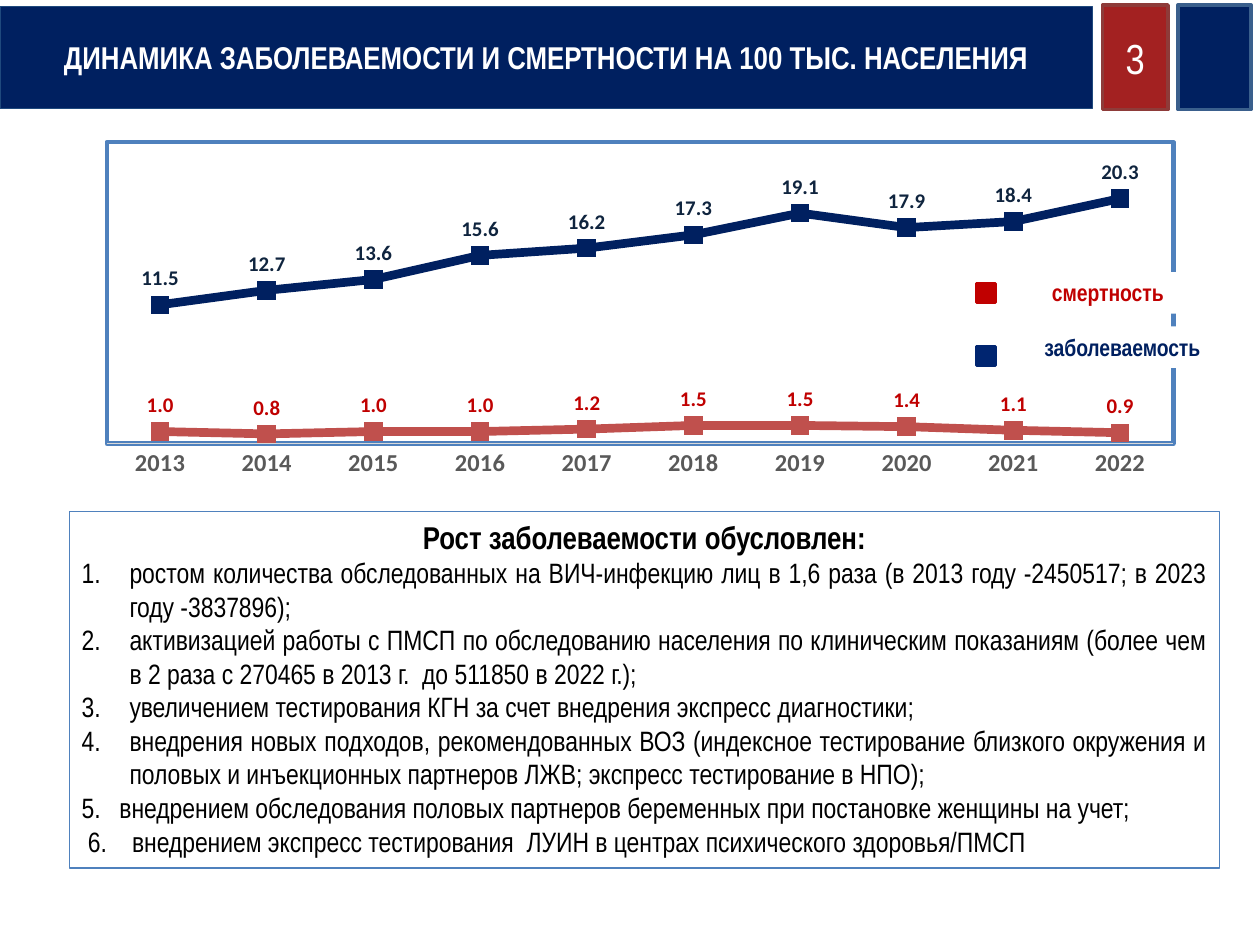
from dataclasses import dataclass

from lxml.etree import SubElement
from pptx import Presentation
from pptx.chart.data import CategoryChartData
from pptx.dml.color import RGBColor
from pptx.enum.chart import XL_CHART_TYPE, XL_LABEL_POSITION, XL_MARKER_STYLE, XL_TICK_MARK
from pptx.enum.shapes import MSO_SHAPE
from pptx.enum.text import MSO_ANCHOR, MSO_AUTO_SIZE, PP_ALIGN
from pptx.oxml import parse_xml
from pptx.oxml.ns import nsdecls, qn
from pptx.util import Inches, Pt

NAVY, MARKER_NAVY, RED, BLUE = "002060", "002570", "C00000", "4F81BD"
COLUMNS, ROWS = 100, 75


def color(hex_value):
    return RGBColor.from_string(hex_value)


@dataclass
class SlideKit:
    """Style and current slide; positions are columns and rows of the grid."""
    deck: object
    slide: object
    font: str = "Arial Narrow"
    chart_font: str = "Calibri"

    def place(self, left, top, width, height):
        column = self.deck.slide_width / COLUMNS
        row = self.deck.slide_height / ROWS
        return (round(left * column), round(top * row),
                round(width * column), round(height * row))

    def box(self, area, fill=None, line=None, weight=2):
        shape = self.slide.shapes.add_shape(MSO_SHAPE.RECTANGLE, *self.place(*area))
        shape.shadow.inherit = False
        if fill:
            shape.fill.solid()
            shape.fill.fore_color.rgb = color(fill)
        else:
            shape.fill.background()
        if line:
            shape.line.color.rgb = color(line)
            shape.line.width = Pt(weight)
        else:
            shape.line.fill.background()
        return shape

    def label(self, shape, text, size, text_color, bold=False,
              align=PP_ALIGN.CENTER, anchor=MSO_ANCHOR.MIDDLE):
        shape.text_frame.word_wrap = True
        shape.text_frame.vertical_anchor = anchor
        paragraph = shape.text_frame.paragraphs[0]
        self.style(paragraph, text, size, text_color, bold, align)

    def style(self, paragraph, text, size, text_color, bold, align):
        paragraph.text = text
        paragraph.alignment = align
        font = paragraph.font
        font.name, font.size, font.bold = self.font, Pt(size), bold
        font.color.rgb = color(text_color)

    def numbered(self, shape, text, size, number, margin, hanging, align):
        paragraph = shape.text_frame.add_paragraph()
        self.style(paragraph, text, size, "000000", False, align)
        properties = paragraph._p.get_or_add_pPr()
        properties.set("marL", str(Inches(margin)))
        properties.set("indent", str(-Inches(hanging)))
        bullet = SubElement(properties, qn("a:buAutoNum"), type="arabicPeriod")
        if number:
            bullet.set("startAt", str(number))
        # The bullet comes before the default run properties
        properties.find(qn("a:defRPr")).addprevious(bullet)

    def line_chart(self, area, years, lines):
        data = CategoryChartData(number_format="0.0")
        data.categories = years
        for name, values, *_ in lines:
            data.add_series(name, values)
        chart = self.slide.shapes.add_chart(
            XL_CHART_TYPE.LINE_MARKERS, *self.place(*area), data).chart
        chart.has_legend = chart.has_title = False
        chart.font.name, chart.font.size = self.chart_font, Pt(10)
        chart.plots[0].vary_by_categories = False

        # Axes
        scale, timeline = chart.value_axis, chart.category_axis
        scale.minimum_scale, scale.maximum_scale = 0, 25
        scale.has_major_gridlines = scale.visible = False
        timeline.major_tick_mark = XL_TICK_MARK.NONE
        timeline.format.line.color.rgb = color("D9D9D9")
        timeline.format.line.width = Pt(0.75)
        self.chart_text(timeline.tick_labels.font, 14, "595959")

        # Series
        for series, (_, _, line, marker, label) in zip(chart.plots[0].series, lines):
            series.smooth = False
            series.format.line.color.rgb = color(line)
            series.format.line.width = Pt(5)
            series.marker.style, series.marker.size = XL_MARKER_STYLE.SQUARE, 10
            series.marker.format.fill.solid()
            series.marker.format.fill.fore_color.rgb = color(marker)
            series.marker.format.line.color.rgb = color(marker)
            labels = series.data_labels
            labels.show_value, labels.position = True, XL_LABEL_POSITION.ABOVE
            labels.number_format, labels.number_format_is_linked = "0.0", False
            self.chart_text(labels.font, 12, label)
        self.frame_plot(chart)

    def chart_text(self, font, size, text_color):
        font.name, font.size, font.bold = self.chart_font, Pt(size), True
        font.color.rgb = color(text_color)

    def frame_plot(self, chart):
        """Stretch the plot over the full width and draw its border."""
        plot_area = chart._chartSpace.find(".//" + qn("c:plotArea"))
        for old in plot_area.findall(qn("c:layout")):
            plot_area.remove(old)
        layout = parse_xml(
            f'<c:layout {nsdecls("c")}><c:manualLayout><c:layoutTarget val="inner"/>'
            '<c:xMode val="edge"/><c:yMode val="edge"/><c:x val="0"/><c:y val="0"/>'
            '<c:w val="1"/><c:h val="0.886"/></c:manualLayout></c:layout>')
        plot_area.insert(0, layout)
        plot_area.append(parse_xml(
            f'<c:spPr {nsdecls("c", "a")}><a:noFill/><a:ln w="{Pt(2.5)}">'
            f'<a:solidFill><a:srgbClr val="{BLUE}"/></a:solidFill></a:ln></c:spPr>'))


def main():
    deck = Presentation()
    deck.slide_width, deck.slide_height = Inches(10), Inches(7.5)
    kit = SlideKit(deck, deck.slides.add_slide(deck.slide_layouts[6]))

    # Trend chart
    incidence = (11.5, 12.7, 13.6, 15.6, 16.2, 17.3, 19.1, 17.9, 18.4, 20.3)
    mortality = (1.0, 0.8, 1.0, 1.0, 1.2, 1.5, 1.5, 1.4, 1.1, 0.9)
    kit.line_chart((8.3, 11.1, 85, 27.2), [str(year) for year in range(2013, 2023)], [
        ("заболеваемость", incidence, NAVY, MARKER_NAVY, "0F243E"),
        ("смертность", mortality, "C0504D", "C0504D", RED),
    ])

    # Legend
    for name, area, text_color, key_top, key_color in (
            ("заболеваемость", (81.9, 25.9, 17.8, 3.3), NAVY, 27.5, MARKER_NAVY),
            ("смертность", (82.5, 21.6, 15.2, 3.3), RED, 22.5, RED)):
        entry = kit.box(area, "FFFFFF")
        kit.label(entry, name, 13.5, text_color, True, PP_ALIGN.LEFT, MSO_ANCHOR.TOP)
        kit.box((77.5, key_top, 1.5, 1.5), key_color, key_color)

    # Header band
    title = kit.box((0, 0.5, 86.7, 8.1), NAVY, "1F497D", 0.75)
    kit.label(title, "ДИНАМИКА ЗАБОЛЕВАЕМОСТИ И СМЕРТНОСТИ НА 100 ТЫС. НАСЕЛЕНИЯ",
              18, "FFFFFF", True)
    page = kit.box((87.5, 0.4, 5.2, 8.3), "A32121", "8E3B39")
    kit.label(page, "3", 24, "FFFFFF")
    kit.box((93.5, 0.4, 5.8, 8.3), NAVY, "3A5F8C")

    # Reasons for the growth
    reasons = kit.box((5.5, 40.6, 91.3, 28.3), None, BLUE, 0.75)
    kit.label(reasons, "Рост заболеваемости обусловлен:", 18, "000000", True,
              anchor=MSO_ANCHOR.TOP)
    reasons.text_frame.auto_size = MSO_AUTO_SIZE.SHAPE_TO_FIT_TEXT
    wide = (None, 0.38, 0.38, PP_ALIGN.JUSTIFY)
    for text, layout in (
            ("ростом количества обследованных на ВИЧ-инфекцию лиц в 1,6 раза "
             "(в 2013 году -2450517; в 2023 году -3837896);", wide),
            ("активизацией работы с ПМСП по обследованию населения по клиническим "
             "показаниям (более чем в 2 раза с 270465 в 2013 г.  до 511850 в 2022 г.);", wide),
            ("увеличением тестирования КГН за счет внедрения экспресс диагностики;", wide),
            ("внедрения новых подходов, рекомендованных ВОЗ (индексное тестирование "
             "близкого окружения и половых и инъекционных партнеров ЛЖВ; "
             "экспресс тестирование в НПО);", wide),
            ("внедрением обследования половых партнеров беременных при постановке "
             "женщины на учет;", (5, 0.3, 0.3, PP_ALIGN.LEFT)),
            ("внедрением экспресс тестирования  ЛУИН в центрах психического "
             "здоровья/ПМСП", (6, 0.4, 0.35, PP_ALIGN.LEFT))):
        kit.numbered(reasons, text, 16, *layout)

    deck.save("out.pptx")


if __name__ == "__main__":
    main()
